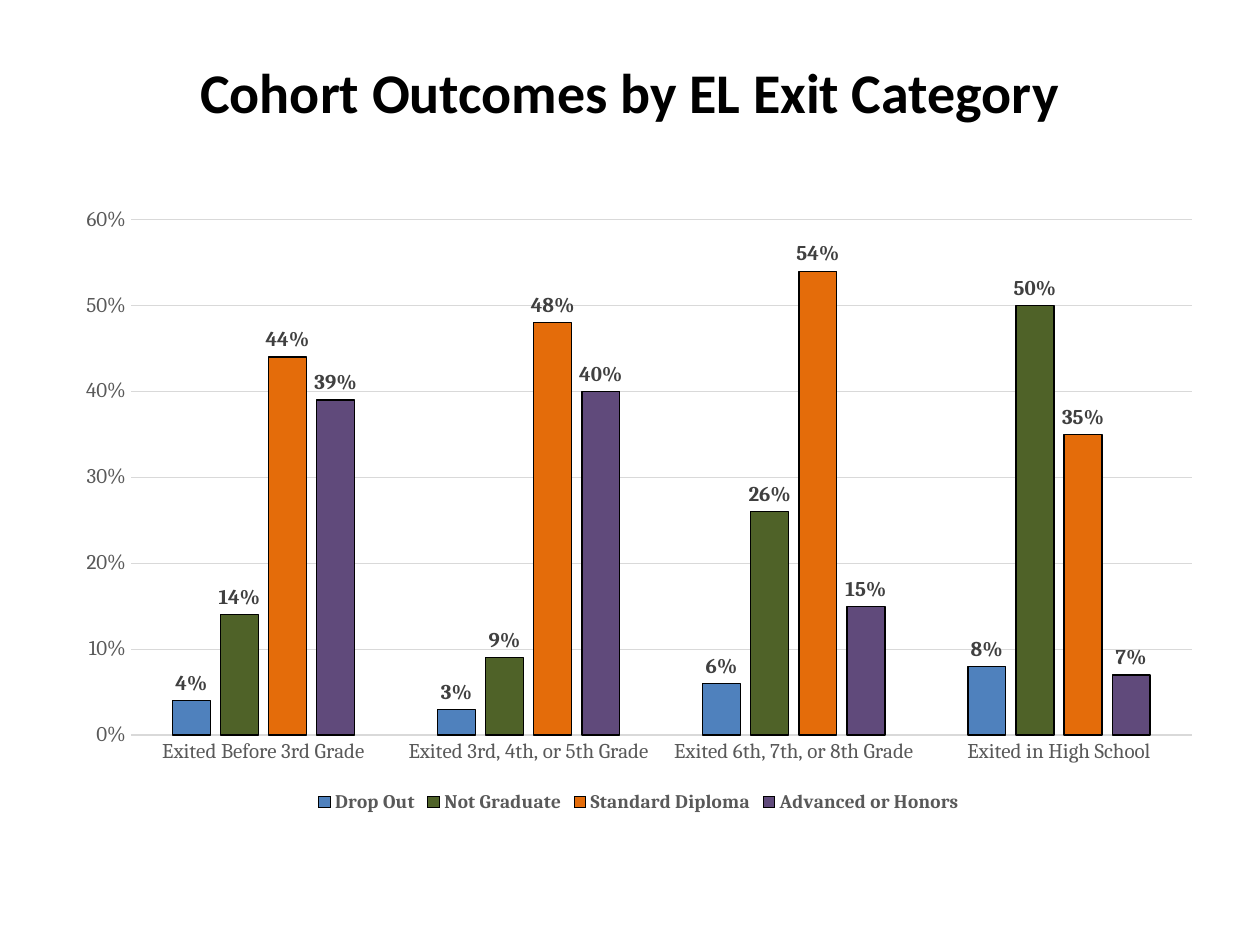
from dataclasses import dataclass

from pptx import Presentation
from pptx.chart.data import CategoryChartData
from pptx.dml.color import RGBColor
from pptx.enum.chart import XL_CHART_TYPE, XL_LABEL_POSITION, XL_LEGEND_POSITION, XL_TICK_MARK
from pptx.enum.text import MSO_ANCHOR, PP_ALIGN
from pptx.util import Inches, Pt

# Content
TITLE = "Cohort Outcomes by EL Exit Category"
EXIT_CATEGORIES = [
    "Exited Before 3rd Grade",
    "Exited 3rd, 4th, or 5th Grade",
    "Exited 6th, 7th, or 8th Grade",
    "Exited in High School",
]
OUTCOMES = [  # name, shares by exit category, fill
    ("Drop Out", (0.04, 0.03, 0.06, 0.08), "4F81BD"),
    ("Not Graduate", (0.14, 0.09, 0.26, 0.50), "4F6228"),
    ("Standard Diploma", (0.44, 0.48, 0.54, 0.35), "E46C0A"),
    ("Advanced or Honors", (0.39, 0.40, 0.15, 0.07), "604A7B"),
]


@dataclass(frozen=True)
class Theme:
    title_font: str = "Calibri"
    chart_font: str = "Cambria"
    black: str = "000000"
    axis_text: str = "595959"
    label_text: str = "404040"
    grid: str = "D9D9D9"
    title_size: float = 32
    chart_size: float = 12
    legend_size: float = 11
    line_width: float = 0.75


THEME = Theme()
PERCENT = "0%"


def style_font(font, name, size, color, bold=False):
    font.name = name
    font.size = Pt(size)
    font.bold = bold
    font.color.rgb = RGBColor.from_string(color)


def style_line(line, color):
    line.color.rgb = RGBColor.from_string(color)
    line.width = Pt(THEME.line_width)


def add_title(page):
    box = page.shapes.add_textbox(Inches(0.5), Inches(0.3), Inches(9), Inches(0.85))
    frame = box.text_frame
    frame.word_wrap = True
    frame.vertical_anchor = MSO_ANCHOR.MIDDLE
    para = frame.paragraphs[0]
    para.text = TITLE
    para.alignment = PP_ALIGN.CENTER
    style_font(para.font, THEME.title_font, THEME.title_size, THEME.black, True)


def add_outcome_chart(page):
    data = CategoryChartData(number_format=PERCENT)
    data.categories = EXIT_CATEGORIES
    for name, shares, _ in OUTCOMES:
        data.add_series(name, shares)
    chart = page.shapes.add_chart(
        XL_CHART_TYPE.COLUMN_CLUSTERED,
        Inches(0.5), Inches(1.55), Inches(9.14), Inches(4.95), data,
    ).chart
    chart.has_title = False
    style_font(chart.font, THEME.title_font, 10, THEME.black)

    # Axes
    for axis in (chart.category_axis, chart.value_axis):
        axis.major_tick_mark = axis.minor_tick_mark = XL_TICK_MARK.NONE
        style_font(axis.tick_labels.font, THEME.chart_font, THEME.chart_size, THEME.axis_text)
    style_line(chart.category_axis.format.line, THEME.grid)
    values = chart.value_axis
    values.minimum_scale, values.maximum_scale, values.major_unit = 0, 0.6, 0.1
    values.format.line.fill.background()
    style_line(values.major_gridlines.format.line, THEME.grid)
    values.tick_labels.number_format = PERCENT
    values.tick_labels.number_format_is_linked = False

    # Columns and their labels
    plot = chart.plots[0]
    plot.gap_width, plot.overlap = 219, -27
    plot.vary_by_categories = False
    for series, (_, _, color) in zip(plot.series, OUTCOMES):
        series.format.fill.solid()
        series.format.fill.fore_color.rgb = RGBColor.from_string(color)
        style_line(series.format.line, THEME.black)
        labels = series.data_labels
        labels.show_value = True
        labels.position = XL_LABEL_POSITION.OUTSIDE_END
        labels.number_format = PERCENT
        labels.number_format_is_linked = False
        style_font(labels.font, THEME.chart_font, THEME.chart_size, THEME.label_text, True)

    # Legend
    chart.has_legend = True
    chart.legend.position = XL_LEGEND_POSITION.BOTTOM
    chart.legend.include_in_layout = False
    style_font(chart.legend.font, THEME.chart_font, THEME.legend_size, THEME.axis_text, True)


def main():
    deck = Presentation()
    deck.slide_width, deck.slide_height = Inches(10), Inches(7.5)
    page = deck.slides.add_slide(deck.slide_layouts[6])
    add_title(page)
    add_outcome_chart(page)
    deck.save("out.pptx")


if __name__ == "__main__":
    main()
